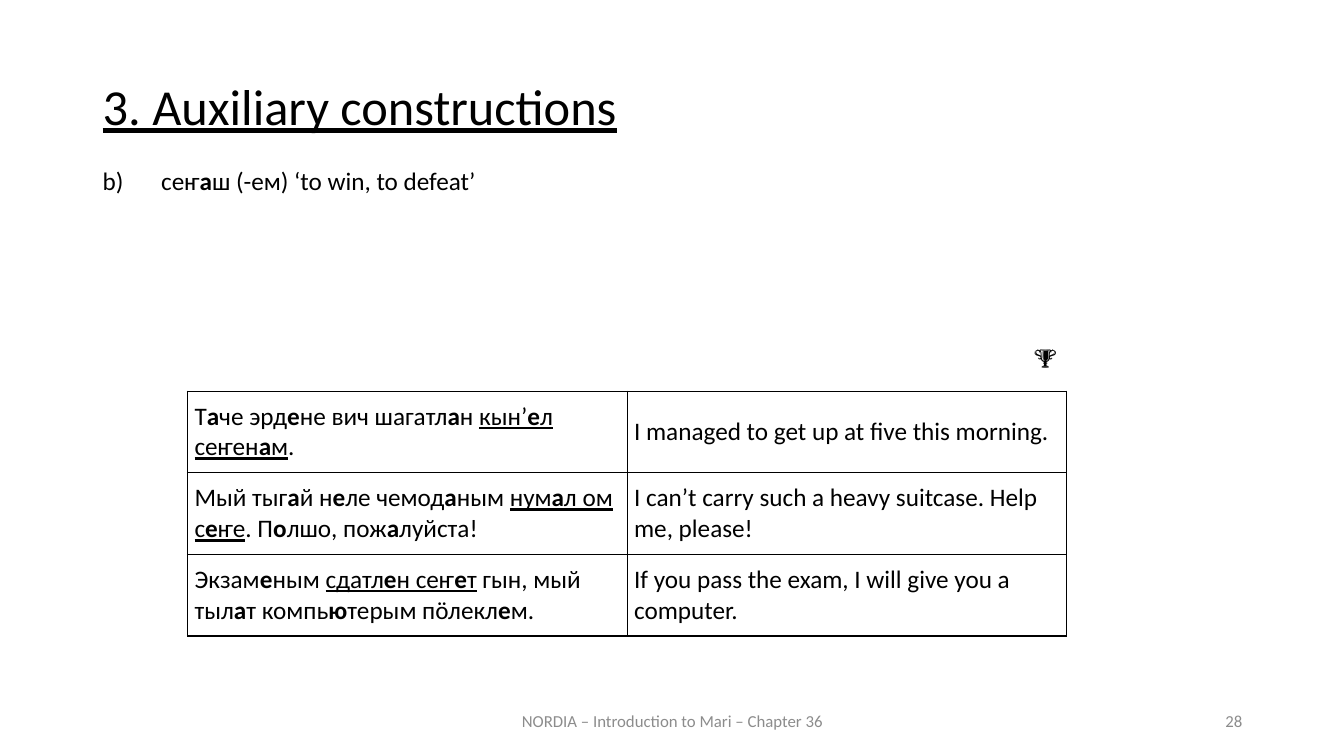
"""Builds a language course slide on auxiliary constructions with example sentences."""
from lxml import etree
from pptx import Presentation
from pptx.dml.color import RGBColor
from pptx.enum.text import MSO_ANCHOR, PP_ALIGN
from pptx.oxml.ns import qn
from pptx.util import Inches, Pt

LEFT, CENTER, RIGHT, JUSTIFY = PP_ALIGN.LEFT, PP_ALIGN.CENTER, PP_ALIGN.RIGHT, PP_ALIGN.JUSTIFY
TOP, MIDDLE = MSO_ANCHOR.TOP, MSO_ANCHOR.MIDDLE

FONT = "Calibri"
COLORS = {"text": "000000", "footer": "8C8C8C", "border": "000000"}

# *...* is bold, _..._ is underlined
TITLE = "_3. Auxiliary constructions_"
ENTRY = "b)\tсеҥ*а*ш (-ем) ‘to win, to defeat’"
TROPHY = "🏆"
FOOTER = "NORDIA – Introduction to Mari – Chapter 36"
PAGE_NUMBER = "28"
EXAMPLES = [
    ("Т*а*че эрд*е*не вич шагатл*а*н _кын’*е*л сеҥен*а*м_.",
     "I managed to get up at five this morning."),
    ("Мый тыг*а*й н*е*ле чемод*а*ным _нум*а*л ом с*е*ҥе_. П*о*лшо, пож*а*луйста!",
     "I can’t carry such a heavy suitcase. Help me, please!"),
    ("Экзам*е*ным _сдатл*е*н сеҥ*е*т_ гын, мый тыл*а*т компь*ю*терым пӧлекл*е*м.",
     "If you pass the exam, I will give you a computer."),
]

TABLE_LEFT, TABLE_TOP = 1.86, 3.88
COLUMN_WIDTH, ROW_HEIGHT = 4.36, 0.81
CELL_INSET = 0.07
ENTRY_TAB = 0.58


def add_runs(para, marked, size=18, color="text"):
    for u, stretch in enumerate(marked.split("_")):
        for b, piece in enumerate(stretch.split("*")):
            if piece:
                span = para.add_run()
                span.text = piece
                span.font.name = FONT
                span.font.size = Pt(size)
                span.font.bold = b % 2 == 1
                span.font.underline = u % 2 == 1
                span.font.color.rgb = RGBColor.from_string(COLORS[color])


def add_text(page, place, marked, size=18, color="text", align=LEFT, anchor=TOP):
    box = page.shapes.add_textbox(*map(Inches, place))
    box.text_frame.word_wrap = True
    box.text_frame.vertical_anchor = anchor
    para = box.text_frame.paragraphs[0]
    para.alignment = align
    add_runs(para, marked, size, color)
    return para


def add_tab_stop(para, position):
    stops = etree.SubElement(para._p.get_or_add_pPr(), qn("a:tabLst"))
    etree.SubElement(stops, qn("a:tab"), pos=str(Inches(position)), algn="l")


def add_borders(cell):
    properties = cell._tc.get_or_add_tcPr()
    for side in ("a:lnL", "a:lnR", "a:lnT", "a:lnB"):
        line = etree.SubElement(properties, qn(side), w=str(Pt(1)))
        fill = etree.SubElement(line, qn("a:solidFill"))
        etree.SubElement(fill, qn("a:srgbClr"), val=COLORS["border"])


def add_examples(page):
    rows, columns = len(EXAMPLES), len(EXAMPLES[0])
    frame = page.shapes.add_table(
        rows, columns, Inches(TABLE_LEFT), Inches(TABLE_TOP),
        Inches(columns * COLUMN_WIDTH), Inches(rows * ROW_HEIGHT))
    table = frame.table
    table.first_row = False
    table.horz_banding = False
    for r, example in enumerate(EXAMPLES):
        table.rows[r].height = Inches(ROW_HEIGHT)
        for c, sentence in enumerate(example):
            cell = table.cell(r, c)
            add_borders(cell)
            cell.fill.background()
            cell.vertical_anchor = MIDDLE
            cell.margin_left = cell.margin_right = Inches(CELL_INSET)
            cell.margin_top = cell.margin_bottom = 0
            add_runs(cell.text_frame.paragraphs[0], sentence)


def main():
    deck = Presentation()
    deck.slide_width, deck.slide_height = Inches(13.33), Inches(7.5)
    page = deck.slides.add_slide(deck.slide_layouts[6])

    title = add_text(page, (0.92, 0.76, 11.5, 0.83), TITLE, size=36, align=JUSTIFY)
    title.line_spacing = 0.9
    title.space_before = Pt(12)
    add_text(page, (4.42, 6.95, 4.5, 0.4), FOOTER, 12, "footer", CENTER, MIDDLE)
    add_text(page, (9.42, 6.95, 3, 0.4), PAGE_NUMBER, 12, "footer", RIGHT, MIDDLE)
    entry = add_text(page, (0.92, 1.59, 11.08, 0.4), ENTRY)
    add_tab_stop(entry, ENTRY_TAB)
    add_examples(page)
    add_text(page, (8.8, 3.35, 1.78, 0.4), TROPHY, align=RIGHT)

    deck.save("out.pptx")


if __name__ == "__main__":
    main()
